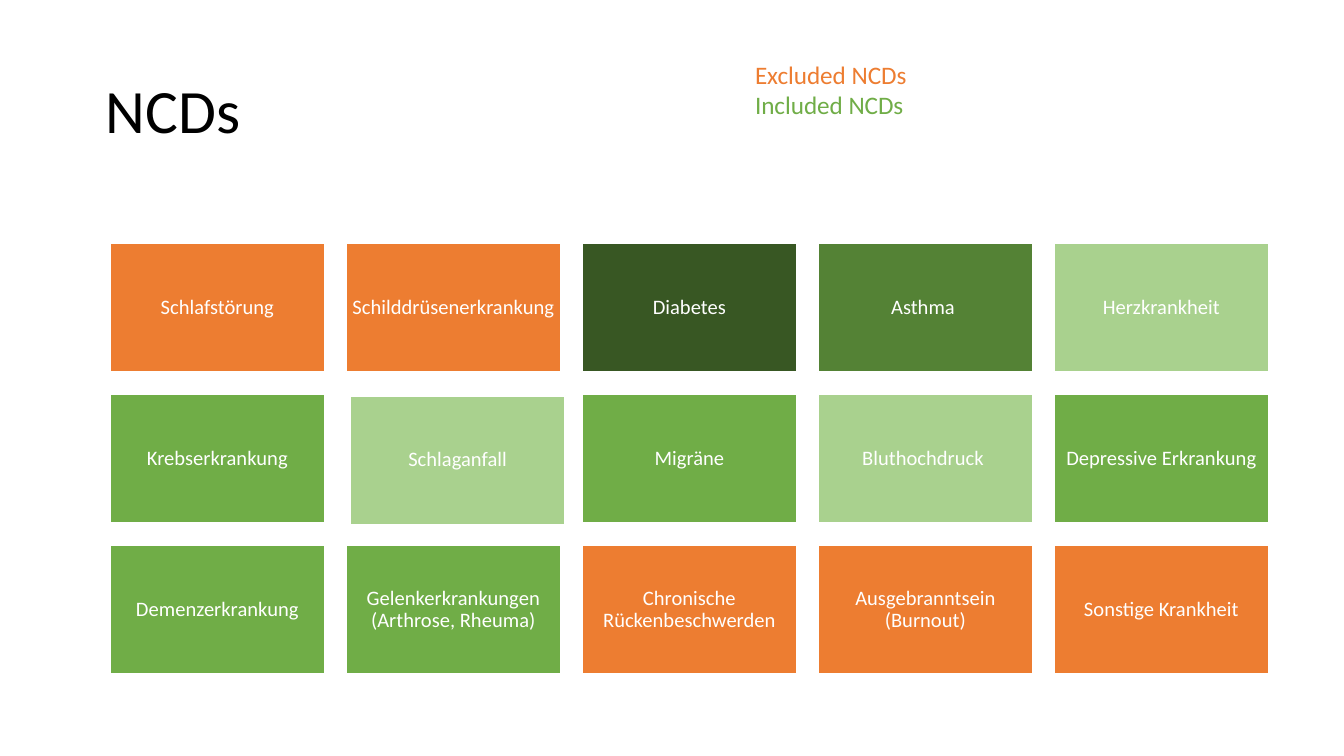
from dataclasses import dataclass

from pptx import Presentation
from pptx.dml.color import RGBColor
from pptx.enum import shapes, text
from pptx.util import Cm, Pt


@dataclass(frozen=True)
class Theme:
    font: str = "Calibri"
    black: str = "000000"
    white: str = "FFFFFF"
    orange: str = "ED7D31"
    green: str = "70AD47"
    light: str = "A9D18E"
    deep: str = "548235"
    dark: str = "385723"
    title: float = 33
    key: float = 13.5
    label: float = 11


T = Theme()


def write(frame, lines, size, align=text.PP_ALIGN.LEFT, lead=1.0,
          anchor=text.MSO_ANCHOR.TOP, inset=None):
    """Fill a text frame with (text, colour) lines, one paragraph each."""
    frame.word_wrap = True
    frame.vertical_anchor = anchor
    if inset is not None:
        frame.margin_left = frame.margin_right = inset
        frame.margin_top = frame.margin_bottom = inset
    for i, (line, color) in enumerate(lines):
        para = frame.add_paragraph() if i else frame.paragraphs[0]
        para.alignment = align
        para.line_spacing = lead
        run = para.add_run()
        run.text = line
        run.font.name = T.font
        run.font.size = Pt(size)
        run.font.color.rgb = RGBColor.from_string(color)


deck = Presentation()
deck.slide_width, deck.slide_height = Cm(25.4), Cm(14.29)
slide = deck.slides.add_slide(deck.slide_layouts[6])

title = slide.shapes.add_textbox(Cm(1.75), Cm(0.76), Cm(21.9), Cm(2.77))
write(title.text_frame, [("NCDs", T.black)], T.title, lead=0.9,
      anchor=text.MSO_ANCHOR.MIDDLE)

rows = [
    [("Schlafstörung", T.orange), ("Schilddrüsenerkrankung ", T.orange),
     ("Diabetes", T.dark), ("Asthma ", T.deep), ("Herzkrankheit", T.light)],
    [("Krebserkrankung", T.green), ("Schlaganfall", T.light),
     ("Migräne", T.green), ("Bluthochdruck ", T.light),
     ("Depressive Erkrankung", T.green)],
    [("Demenzerkrankung", T.green),
     ("Gelenkerkrankungen (Arthrose, Rheuma)", T.green),
     ("Chronische Rückenbeschwerden", T.orange),
     ("Ausgebranntsein (Burnout)", T.orange),
     ("Sonstige Krankheit", T.orange)],
]
left, top = 2.08, 4.6
wide, high = 4.06, 2.44
step_x, step_y = 4.46, 2.85
nudge = {"Schlaganfall": (0.08, 0.03)}

for r, row in enumerate(rows):
    for c, (name, color) in enumerate(row):
        dx, dy = nudge.get(name, (0, 0))
        tile = slide.shapes.add_shape(
            shapes.MSO_SHAPE.RECTANGLE, Cm(left + c * step_x + dx),
            Cm(top + r * step_y + dy), Cm(wide), Cm(high))
        tile.shadow.inherit = False
        tile.fill.solid()
        tile.fill.fore_color.rgb = RGBColor.from_string(color)
        tile.line.color.rgb = RGBColor.from_string(T.white)
        tile.line.width = Pt(1)
        write(tile.text_frame, [(name, T.white)], T.label,
              align=text.PP_ALIGN.CENTER, lead=0.9,
              anchor=text.MSO_ANCHOR.MIDDLE, inset=Cm(0.12))

key = slide.shapes.add_textbox(Cm(14.02), Cm(0.99), Cm(5.51), Cm(1.42))
write(key.text_frame,
      [("Excluded NCDs", T.orange), ("Included NCDs", T.green)], T.key)

deck.save("out.pptx")
